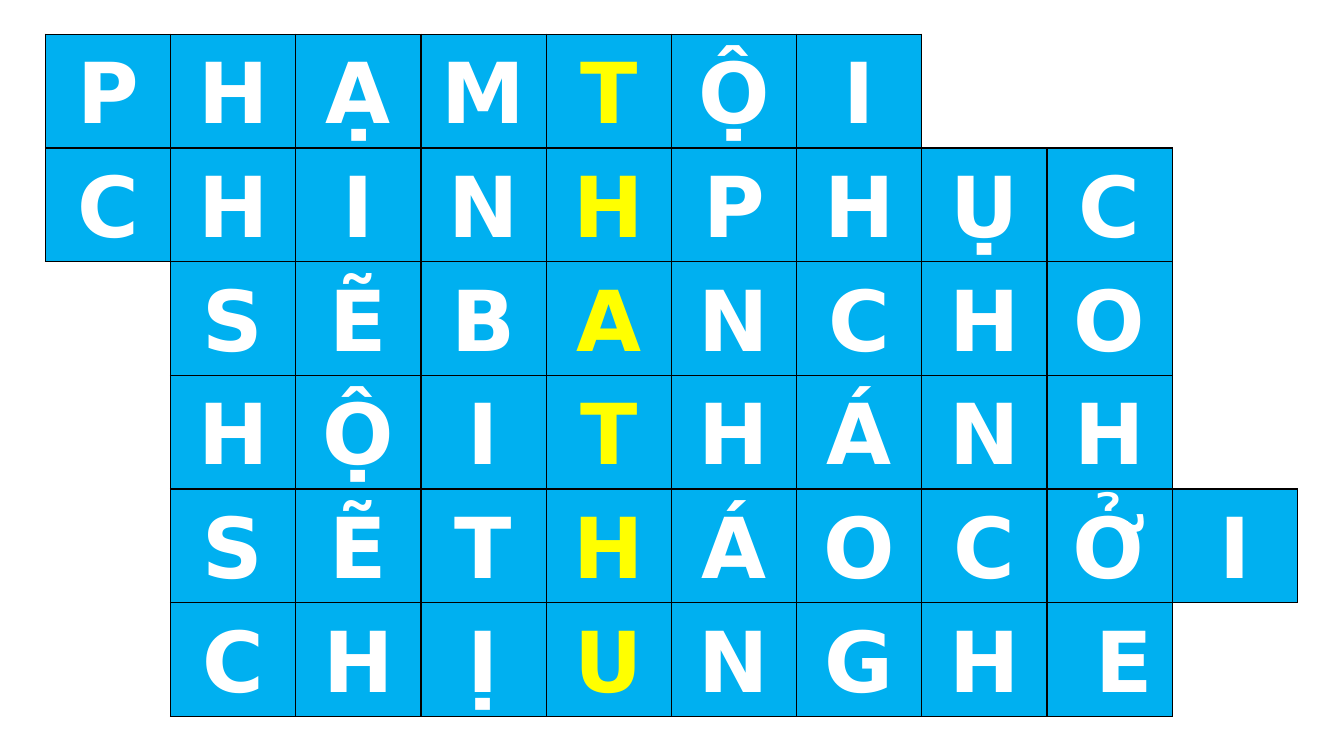
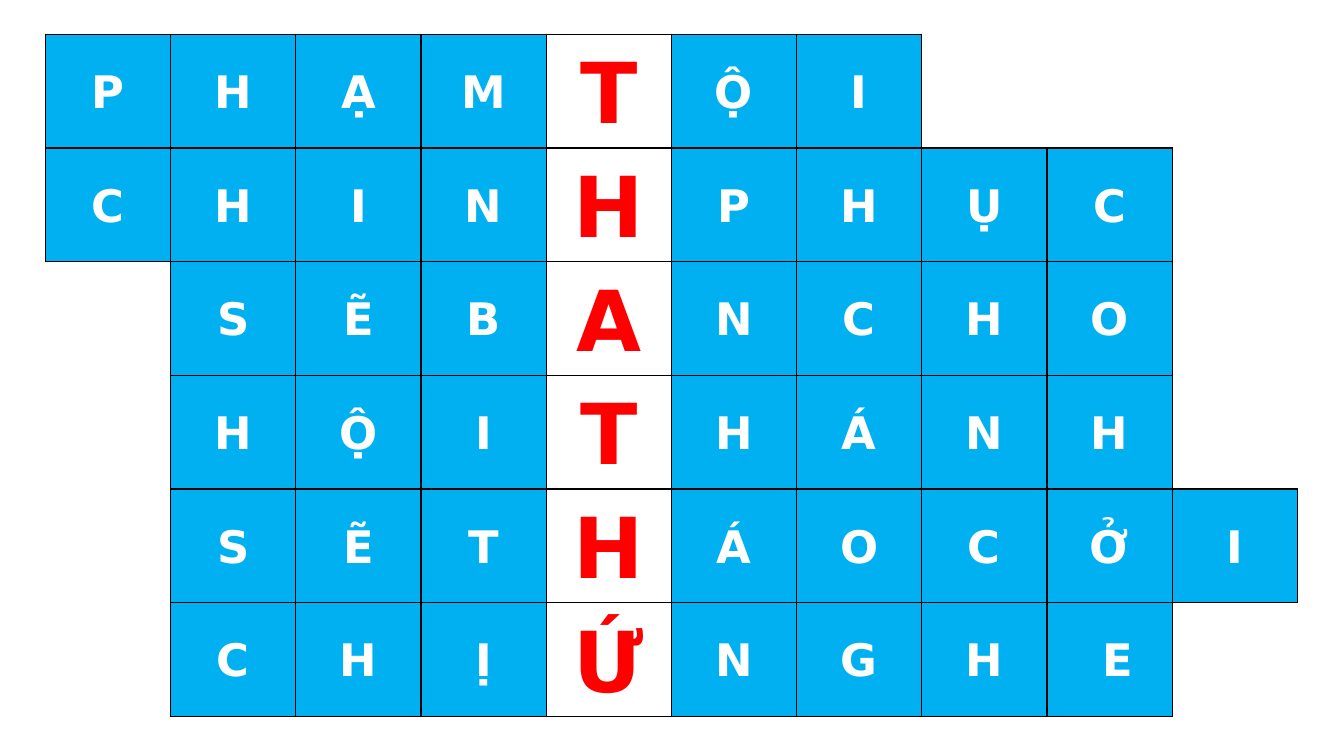
from dataclasses import dataclass

from lxml.etree import SubElement
from pptx import Presentation
from pptx.dml.color import RGBColor
from pptx.enum.text import MSO_ANCHOR, PP_ALIGN
from pptx.oxml.ns import qn
from pptx.util import Inches, Pt


@dataclass(frozen=True)
class Theme:
    """Colours, type sizes and measures shared by both pages."""

    tile: str = "00B0F0"
    white: str = "FFFFFF"
    yellow: str = "FFFF00"
    red: str = "FF0000"
    border: str = "000000"
    border_points: float = 1
    font: str = "DejaVu Sans"
    large: int = 60
    small: int = 32
    line_spacing: float = 1.07


@dataclass(frozen=True)
class LetterStyle:
    """Look of one kind of letter tile."""

    size: int
    colour: str
    fill: str


THEME = Theme()
PAGE_SIZE = (13.33, 7.5)
BOARD_BOX = (0.45, 0.34, 12.42, 6.77)
COLUMN_COUNT = 10
KEY_COLUMN = 4
EDGES = {"lnL": (0, -1), "lnR": (0, 1), "lnT": (-1, 0), "lnB": (1, 0)}
CELL_FORMAT = {
    "vertical_anchor": MSO_ANCHOR.MIDDLE,
    "margin_left": Inches(0.07),
    "margin_right": Inches(0.07),
    "margin_top": 0,
    "margin_bottom": 0,
}
ANSWERS = [
    (0, "PHẠMTỘI"),
    (0, "CHINHPHỤC"),
    (1, "SẼBANCHO"),
    (1, "HỘITHÁNH"),
    (1, "SẼTHÁOCỞI"),
    (1, [*"CHỊUNGH", " E"]),
]
PLAIN_LARGE = LetterStyle(THEME.large, THEME.white, THEME.tile)
PLAIN_SMALL = LetterStyle(THEME.small, THEME.white, THEME.tile)
KEY_YELLOW = LetterStyle(THEME.large, THEME.yellow, THEME.tile)
KEY_RED = LetterStyle(THEME.large, THEME.red, THEME.white)
PAGES = [
    (PLAIN_LARGE, KEY_YELLOW, "THATHU"),
    (PLAIN_SMALL, KEY_RED, "THATHỨ"),
]


def set_formats(target, formats):
    """Set each named attribute of the target."""
    for name, value in formats.items():
        setattr(target, name, value)


def place_letters(keyword):
    """Map (row, column) to its letter, with the keyword down the key column."""
    letters = {
        (row, start + offset): letter
        for row, (start, answer) in enumerate(ANSWERS)
        for offset, letter in enumerate(answer)
    }
    letters.update({(row, KEY_COLUMN): letter for row, letter in enumerate(keyword)})
    return letters


def write_letter(cell, letter, style):
    """Fill a tile and write its letter."""
    cell.fill.solid()
    cell.fill.fore_color.rgb = RGBColor.from_string(style.fill)
    para = cell.text_frame.paragraphs[0]
    set_formats(para, {"alignment": PP_ALIGN.CENTER, "line_spacing": THEME.line_spacing})
    span = para.add_run()
    span.text = letter
    set_formats(span.font, {"name": THEME.font, "size": Pt(style.size), "bold": True})
    span.font.color.rgb = RGBColor.from_string(style.colour)


def draw_borders(cell, position, letters):
    """Draw each edge that touches a lettered tile and clear the others."""
    row, column = position
    properties = cell._tc.get_or_add_tcPr()
    for index, (tag, (down, across)) in enumerate(EDGES.items()):
        line = SubElement(properties, qn(f"a:{tag}"), w=str(Pt(THEME.border_points)))
        properties.insert(index, line)
        if position in letters or (row + down, column + across) in letters:
            fill = SubElement(line, qn("a:solidFill"))
            SubElement(fill, qn("a:srgbClr"), val=THEME.border)
        else:
            SubElement(line, qn("a:noFill"))


def add_board(page, box, plain, key, keyword):
    """Add the crossword table inside the given box."""
    left, top, width, height = map(Inches, box)
    row_count = len(ANSWERS)
    table = page.shapes.add_table(row_count, COLUMN_COUNT, left, top, width, height).table
    set_formats(table, {"first_row": False, "horz_banding": False})
    letters = place_letters(keyword)
    for row in range(row_count):
        for column in range(COLUMN_COUNT):
            position = (row, column)
            cell = table.cell(row, column)
            set_formats(cell, CELL_FORMAT)
            if position in letters:
                style = key if column == KEY_COLUMN else plain
                write_letter(cell, letters[position], style)
            else:
                cell.fill.background()
            draw_borders(cell, position, letters)


def main():
    """Build and save the deck."""
    deck = Presentation()
    deck.slide_width, deck.slide_height = map(Inches, PAGE_SIZE)
    for plain, key, keyword in PAGES:
        page = deck.slides.add_slide(deck.slide_layouts[6])
        add_board(page, BOARD_BOX, plain, key, keyword)
    deck.save("out.pptx")


if __name__ == "__main__":
    main()
